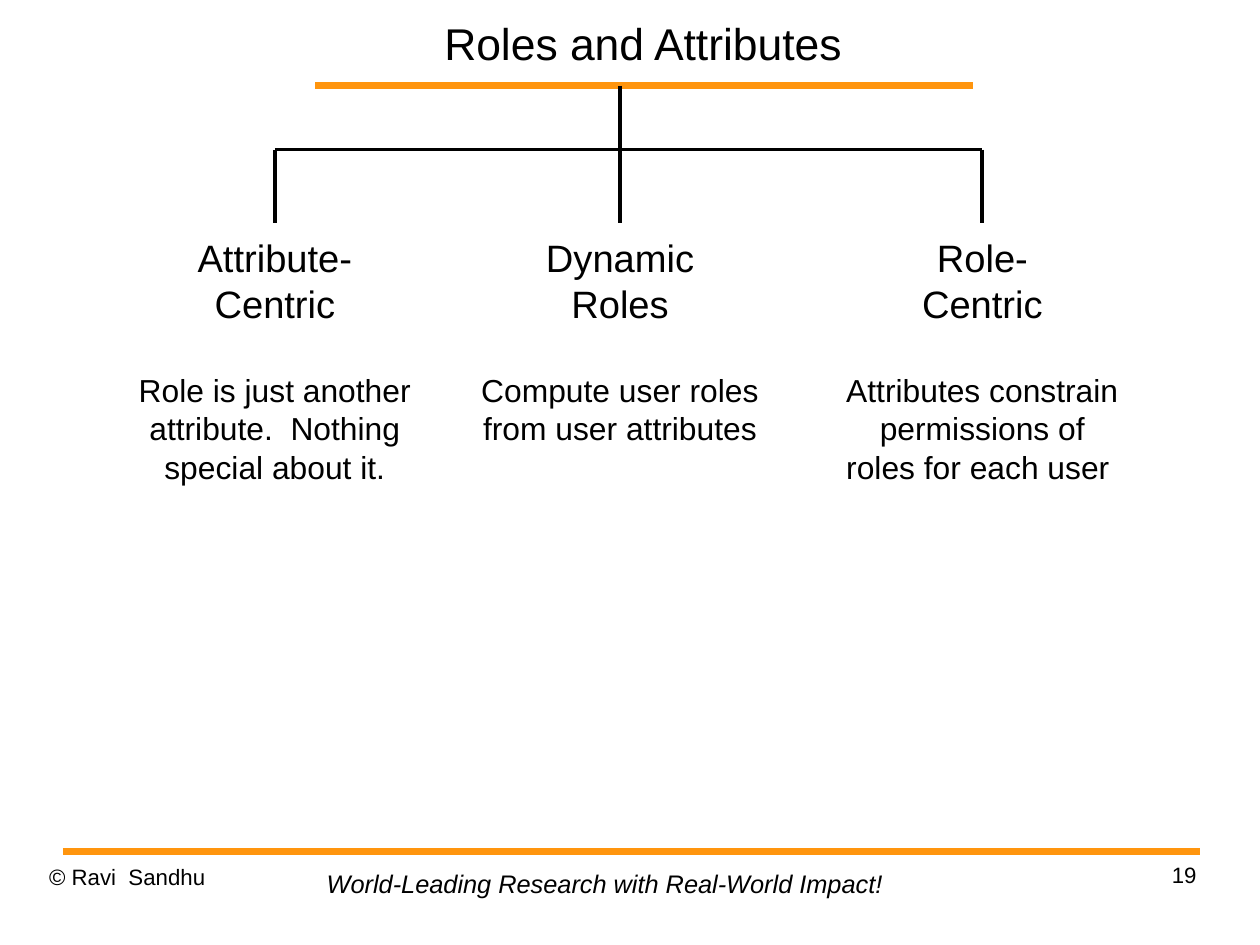
import pptx
import pptx.dml.color
import pptx.enum.shapes
import pptx.enum.text
import pptx.oxml.ns
import pptx.util
from lxml import etree

Pt = pptx.util.Pt
ALIGN = pptx.enum.text.PP_ALIGN
ANCHOR = pptx.enum.text.MSO_ANCHOR
COLORS = {"text": "000000", "accent": "FF950E"}
FONT = "Arial"
COLUMNS = [
    (77.76, "Attribute-", "Centric",
     "Role is just another attribute.  Nothing special about it."),
    (295.2, "Dynamic", "Roles", "Compute user roles from user attributes"),
    (523.44, "Role-", "Centric",
     "Attributes constrain permissions of roles for each user "),
]


def rgb(name):
    """Return the palette colour of that name."""
    return pptx.dml.color.RGBColor.from_string(COLORS[name])


def set_frame(box, inset_x=0, inset_y=0, anchor=ANCHOR.TOP, wrap=True):
    """Set the insets, anchor and wrapping of a box and return its frame."""
    frame = box.text_frame
    frame.margin_left = frame.margin_right = Pt(inset_x)
    frame.margin_top = frame.margin_bottom = Pt(inset_y)
    frame.vertical_anchor = anchor
    frame.word_wrap = wrap
    return frame


def write(para, text, size=14, align=ALIGN.LEFT, italic=False, before=0, spacing=1.0):
    """Write formatted text into a paragraph."""
    para.alignment = align
    para.space_before = Pt(before)
    para.line_spacing = spacing
    span = para.add_run()
    span.text = text
    span.font.name = FONT
    span.font.size = Pt(size)
    span.font.italic = italic
    span.font.color.rgb = rgb("text")


def add_box(page, left, top, width, height):
    """Add a text box measured in points."""
    return page.shapes.add_textbox(Pt(left), Pt(top), Pt(width), Pt(height))


def add_line(page, x1, y1, x2, y2, weight, color="text"):
    """Add a straight line without shadow."""
    line = page.shapes.add_connector(
        pptx.enum.shapes.MSO_CONNECTOR.STRAIGHT, Pt(x1), Pt(y1), Pt(x2), Pt(y2))
    line.line.width = Pt(weight)
    line.line.color.rgb = rgb(color)
    etree.SubElement(line._element.spPr, pptx.oxml.ns.qn("a:effectLst"))


def add_heading(page, left, top, width, height):
    """Place the title and the rule beneath it."""
    add_line(page, left + 25.2, top + height, left + 439.2, top + height, 4.31, "accent")
    title = page.shapes.title
    title.left, title.top = Pt(left), Pt(top)
    title.width, title.height = Pt(width), Pt(height)
    frame = set_frame(title, anchor=ANCHOR.MIDDLE)
    write(frame.paragraphs[0], "Roles and Attributes", size=28, align=ALIGN.CENTER)


def add_footer(page, left, top, width):
    """Place the footer rule, copyright, motto and page number."""
    add_line(page, left, top, left + width, top, 4.31, "accent")
    owner = set_frame(add_box(page, left - 8.64, top + 7.2, 185, 41))
    write(owner.paragraphs[0], "© Ravi  Sandhu", spacing=1.01)
    number = set_frame(add_box(page, left + width - 187.2, top + 5.76, 185, 41))
    write(number.paragraphs[0], "19", align=ALIGN.RIGHT, spacing=1.01)
    motto = set_frame(add_box(page, left + 159.12, top + 7.2, 365.76, 26.64),
                      7.2, 3.6, wrap=False)
    write(motto.paragraphs[0], "World-Leading Research with Real-World Impact!",
          size=16, italic=True)


def add_column(page, left, top, width, height, heading, description):
    """Place a two-line heading with its description below."""
    frame = set_frame(add_box(page, left, top, width, height), 7.2, 3.6)
    write(frame.paragraphs[0], heading[0], size=24, align=ALIGN.CENTER)
    write(frame.add_paragraph(), heading[1], size=24, align=ALIGN.CENTER)
    write(frame.add_paragraph(), description, size=20, align=ALIGN.CENTER, before=28.6)


def add_tree(page, root, top, width, height):
    """Place the columns and the branches that lead to them."""
    bar, tip = top - 49.68, top - 3.6
    centers = [column[0] + width / 2 for column in COLUMNS]
    add_line(page, centers[0], bar, centers[-1], bar, 2)
    for center, start in zip(centers, (bar, root, bar)):
        add_line(page, center, start, center, tip, 2.5)
    for left, first, second, description in COLUMNS:
        add_column(page, left, top, width, height, (first, second), description)


def main():
    """Build and save the slide."""
    deck = pptx.Presentation()
    deck.slide_width, deck.slide_height = Pt(793.75), Pt(595.25)
    page = deck.slides.add_slide(deck.slide_layouts[5])
    add_heading(page, 173.52, 0, 462.96, 54)
    add_tree(page, 54, 144, 190.8, 167)
    add_footer(page, 39.6, 536.4, 716.4)
    deck.save("out.pptx")


if __name__ == "__main__":
    main()
